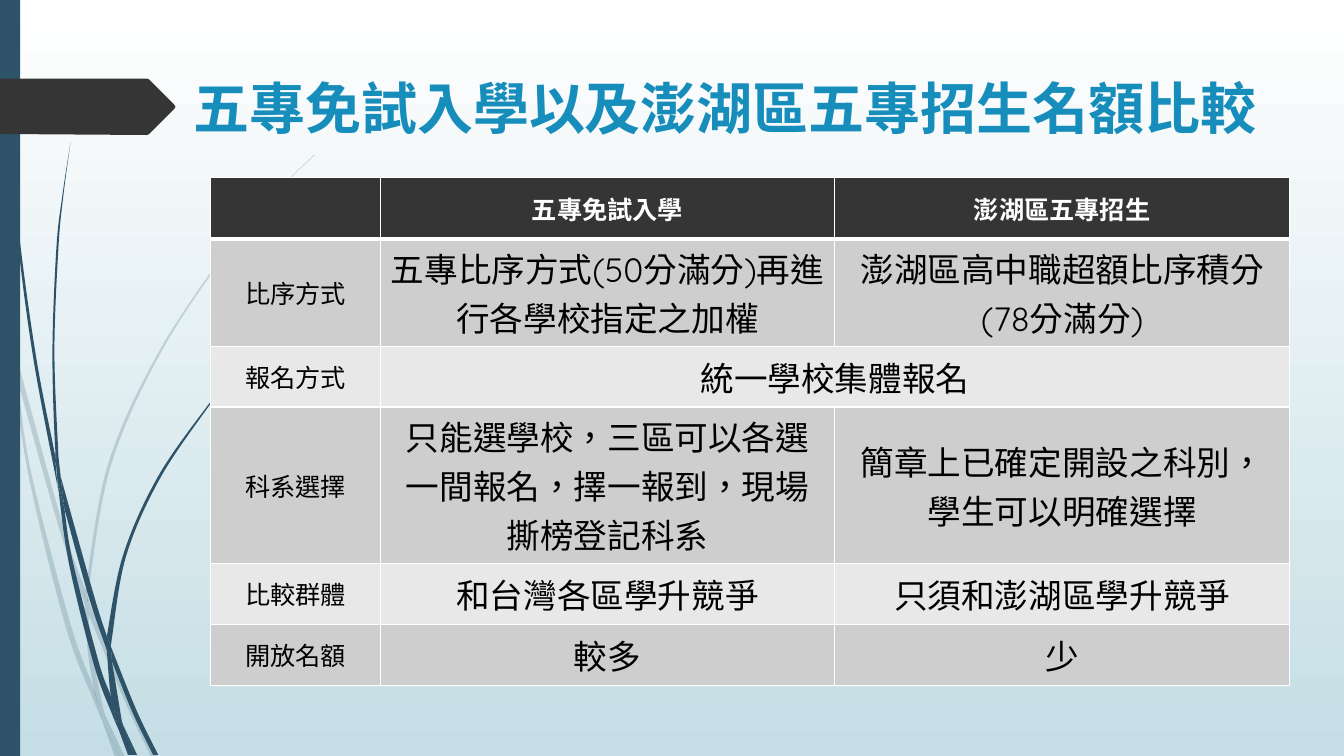
import pptx
import pptx.util
import pptx.dml.color
import pptx.enum.lang
import pptx.enum.shapes
import pptx.enum.text
import pptx.oxml
import pptx.oxml.ns
import lxml.etree

PX = 9144  # one hundredth of an inch
FONT = "Quicksand"
COLORS = {
    "sky_top": "FFFFFF", "sky_bottom": "C5DEE5", "grass": "2E5369",
    "dark": "353535", "title": "178DBB", "white": "FFFFFF",
    "black": "000000", "band_odd": "CECECE", "band_even": "E8E8E8",
}

# Each blade is a list of edges; each edge is a smooth run of points.
FADED_BLADES = [
    [[(11, 350), (9, 322), (0, 282)], [(0, 299), (10, 344), (11, 350)]],
    [[(14, 345), (62, 520), (85, 586)], [(84, 599), (58, 522), (17, 376)]],
    [[(88, 596), (92, 607), (127, 692), (155, 751)], [(150, 751), (123, 694), (88, 610)]],
    [[(119, 751)], [(124, 751), (105, 711)]],
    [[(11, 350), (17, 376), (31, 469), (70, 619), (93, 683), (99, 707), (101, 714)],
     [(92, 693), (65, 621), (28, 470), (11, 350)]],
    [[(84, 599), (87, 646), (93, 683), (96, 692), (105, 711)],
     [(103, 706), (91, 646), (88, 610), (88, 608)]],
    [[(88, 596), (88, 584), (110, 462), (160, 349), (229, 245), (268, 198), (290, 175), (312, 154)],
     [(312, 153), (289, 175), (268, 197), (228, 244), (158, 348), (107, 461), (85, 584), (85, 586)]],
    [[(101, 714), (114, 751)], [(119, 751)]],
    [[(88, 608), (88, 596)], [(85, 586), (84, 599)]],
    [[(96, 692)], [(93, 683), (99, 707), (101, 714), (119, 751)], [(105, 711)]],
]
SOLID_BLADES = [
    [[(3, 0), (4, 48), (7, 110), (17, 233), (33, 355), (56, 477), (57, 481)],
     [(55, 457), (55, 453), (36, 355), (19, 232), (8, 109), (5, 48), (4, 0)]],
    [[(60, 472), (93, 590), (106, 631)], [(106, 645), (88, 592), (64, 505)]],
    [[(110, 641), (113, 649), (136, 706), (157, 749)], [(152, 749), (132, 708), (111, 656)]],
    [[(57, 477), (68, 557), (93, 659), (111, 708), (117, 722)],
     [(116, 717), (110, 691), (98, 657), (72, 556), (64, 505)]],
    [[(70, 141), (62, 193), (56, 245), (52, 349), (55, 449), (60, 472)],
     [(58, 453), (54, 349), (58, 245), (63, 193), (70, 141)]],
    [[(122, 719), (133, 749)], [(136, 749)]],
    [[(55, 449), (55, 453), (57, 477)], [(64, 505), (60, 472)]],
    [[(111, 633), (125, 552), (158, 476), (205, 406), (231, 374), (245, 359), (261, 344)],
     [(260, 344), (245, 358), (231, 373), (204, 405), (156, 474), (122, 551), (106, 631)],
     [(110, 641)]],
    [[(117, 722), (127, 749)], [(131, 749)]],
    [[(106, 645), (110, 691), (116, 706), (122, 719)], [(121, 716), (111, 656), (109, 651)]],
    [[(106, 631), (106, 645)], [(111, 656), (110, 641)]],
    [[(110, 691), (116, 717), (117, 722), (130, 749)], [(133, 749), (122, 719), (116, 706)]],
]
TAG_OUTLINE = [(0, 78), (146, 78), (148, 79), (173, 104), (174, 106),
               (173, 108), (148, 133), (146, 134), (0, 133)]

TITLE = "五專免試入學以及澎湖區五專招生名額比較"
COLUMN_WIDTHS = [168, 451, 451]
ROW_HEIGHTS = [61, 105, 60, 150, 61, 60]
COMPARISON = [
    ["", "五專免試入學", "澎湖區五專招生"],
    ["比序方式", "五專比序方式(50分滿分)再進行各學校指定之加權", "澎湖區高中職超額比序積分(78分滿分)"],
    ["報名方式", "統一學校集體報名", ""],
    ["科系選擇", "只能選學校，三區可以各選一間報名，擇一報到，現場撕榜登記科系",
     "簡章上已確定開設之科別，學生可以明確選擇"],
    ["比較群體", "和台灣各區學升競爭", "只須和澎湖區學升競爭"],
    ["開放名額", "較多", "少"],
]
SHARED_ROW = 2


def px(length):
    return round(length * PX)


def rgb(color):
    return pptx.dml.color.RGBColor.from_string(COLORS[color])


def bezier_steps(edge):
    """Two handles and an end point for each step along the edge."""
    padded = [edge[0], *edge, edge[-1]]
    for a, b, c, d in zip(padded, padded[1:], padded[2:], padded[3:]):
        leaving = tuple(q + (r - p) / 6 for p, q, r in zip(a, b, c))
        arriving = tuple(r - (s - q) / 6 for q, r, s in zip(b, c, d))
        yield [leaving, arriving, c]


def paint(shape, color):
    shape.shadow.inherit = False
    shape.fill.solid()
    shape.fill.fore_color.rgb = rgb(color)
    shape.line.fill.background()


def bend(outline, steps):
    """Turn each run of three lines that belongs to one step into a curve."""
    lines = iter(outline._element.findall(".//" + pptx.oxml.ns.qn("a:lnTo")))
    for step in steps:
        first, *others = [next(lines) for _ in step]
        if others:
            curve = lxml.etree.Element(pptx.oxml.ns.qn("a:cubicBezTo"))
            first.addprevious(curve)
            for line in (first, *others):
                curve.append(line[0])
                line.getparent().remove(line)


def add_outline(slide, edges, color, opacity=100):
    steps = []
    for edge in edges:
        steps += [[edge[0]], *bezier_steps(edge)]
    steps = steps[1:]
    start, *points = [(px(x), px(y)) for x, y in [edges[0][0], *sum(steps, [])]]
    builder = slide.shapes.build_freeform(*start)
    builder.add_line_segments(points, close=False)
    builder.add_line_segments([], close=True)
    outline = builder.convert_to_shape()
    bend(outline, steps)
    paint(outline, color)
    if opacity < 100:
        tint = outline.fill._xPr.find(".//" + pptx.oxml.ns.qn("a:srgbClr"))
        alpha = lxml.etree.SubElement(tint, pptx.oxml.ns.qn("a:alpha"))
        alpha.set("val", str(opacity * 1000))


def add_side_bar(slide):
    bar = slide.shapes.add_shape(
        pptx.enum.shapes.MSO_SHAPE.RECTANGLE, 0, 0, px(20), px(750))
    paint(bar, "grass")


def set_background(slide):
    sky = slide.background.fill
    sky.gradient()
    sky.gradient_angle = 270
    for stop, color in zip(sky.gradient_stops, ("sky_top", "sky_bottom")):
        stop.color.rgb = rgb(color)


def write(frame, text, size, color, bold):
    frame.word_wrap = True
    paragraph = frame.paragraphs[0]
    paragraph.alignment = pptx.enum.text.PP_ALIGN.CENTER
    run = paragraph.add_run()
    run.text = text
    run.font.name = FONT
    run.font.size = pptx.util.Pt(size)
    run.font.bold = bold
    run.font.color.rgb = rgb(color)
    run.font.language_id = pptx.enum.lang.MSO_LANGUAGE_ID.TRADITIONAL_CHINESE


def set_title(slide):
    title = slide.shapes.title
    title.left, title.top, title.width, title.height = map(px, (180, 67, 1078, 79))
    frame = title.text_frame
    frame.auto_size = pptx.enum.text.MSO_AUTO_SIZE.NONE
    frame.vertical_anchor = pptx.enum.text.MSO_ANCHOR.MIDDLE
    frame.margin_left = frame.margin_right = 0
    write(frame, TITLE, 40, "title", True)


def set_borders(cell, row):
    widths = {"L": 1, "R": 1, "T": 3 if row == 1 else 1, "B": 3 if row == 0 else 1}
    properties = cell._tc.get_or_add_tcPr()
    for side, width in widths.items():
        properties.append(pptx.oxml.parse_xml(
            f'<a:ln{side} {pptx.oxml.ns.nsdecls("a")} w="{pptx.util.Pt(width)}"><a:solidFill>'
            f'<a:srgbClr val="{COLORS["white"]}"/></a:solidFill></a:ln{side}>'))


def add_comparison(slide):
    table = slide.shapes.add_table(
        len(ROW_HEIGHTS), len(COLUMN_WIDTHS), px(209), px(176),
        px(sum(COLUMN_WIDTHS)), px(sum(ROW_HEIGHTS))).table
    for column, width in zip(table.columns, COLUMN_WIDTHS):
        column.width = px(width)
    for row, height in zip(table.rows, ROW_HEIGHTS):
        row.height = px(height)
    table.cell(SHARED_ROW, 1).merge(table.cell(SHARED_ROW, 2))
    for r, texts in enumerate(COMPARISON):
        header = r == 0
        band = "dark" if header else "band_odd" if r % 2 else "band_even"
        for c, text in enumerate(texts):
            cell = table.cell(r, c)
            set_borders(cell, r)
            cell.fill.solid()
            cell.fill.fore_color.rgb = rgb(band)
            cell.vertical_anchor = pptx.enum.text.MSO_ANCHOR.MIDDLE
            if text:
                size = 18 if header or c == 0 else 24
                write(cell.text_frame, text, size, "white" if header else "black", header)


def main():
    deck = pptx.Presentation()
    deck.slide_width, deck.slide_height = pptx.util.Inches(13.33), px(750)
    slide = deck.slides.add_slide(deck.slide_layouts[5])
    set_background(slide)
    for blades, opacity in ((FADED_BLADES, 20), (SOLID_BLADES, 100)):
        for edges in blades:
            add_outline(slide, edges, "grass", opacity)
    add_side_bar(slide)
    add_outline(slide, [[corner] for corner in TAG_OUTLINE], "dark")
    set_title(slide)
    add_comparison(slide)
    deck.save("out.pptx")


if __name__ == "__main__":
    main()
